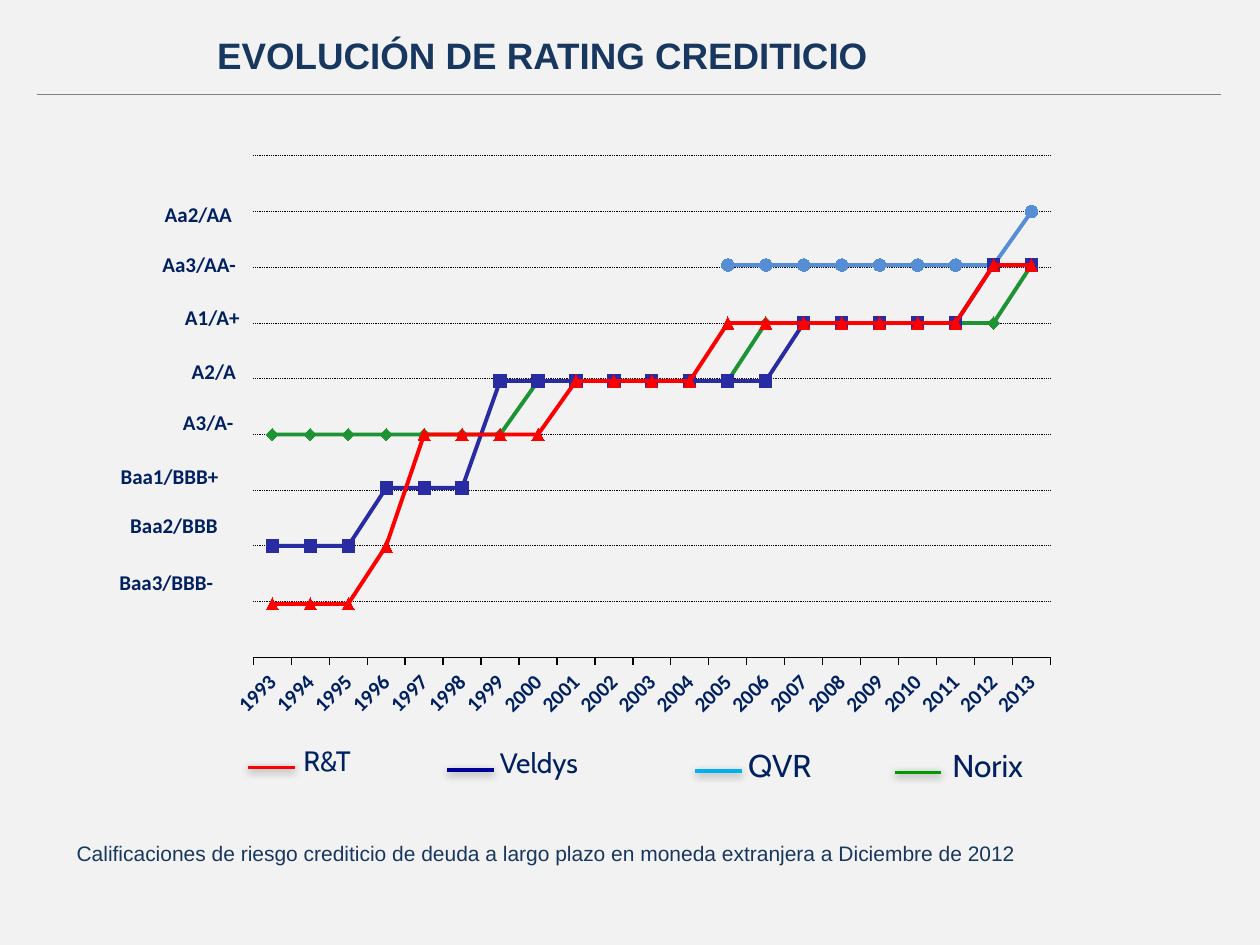
import pptx
import pptx.chart.data
import pptx.dml.color
import pptx.enum.chart
import pptx.enum.dml
import pptx.enum.shapes
import pptx.enum.text
import pptx.oxml
import pptx.oxml.ns
import pptx.util

Inches = pptx.util.Inches
Pt = pptx.util.Pt
RGBColor = pptx.dml.color.RGBColor
Marker = pptx.enum.chart.XL_MARKER_STYLE
Align = pptx.enum.text.PP_ALIGN
qn = pptx.oxml.ns.qn

BACKGROUND = RGBColor(0xF2, 0xF2, 0xF2)
TITLE_BLUE = RGBColor(0x17, 0x37, 0x5E)
NAVY = RGBColor(0x00, 0x20, 0x60)
GRAY = RGBColor(0x80, 0x80, 0x80)
BLACK = RGBColor(0x00, 0x00, 0x00)
RED = RGBColor(0xFF, 0x00, 0x00)
GREEN = RGBColor(0x1D, 0x93, 0x33)
MARKER_GREEN = RGBColor(0x00, 0xB0, 0x50)
SKY = RGBColor(0x55, 0x8E, 0xD5)
INDIGO = RGBColor(0x28, 0x2B, 0xA2)
KEY_GREEN = RGBColor(0x00, 0x99, 0x00)
KEY_BLUE = RGBColor(0x00, 0x00, 0x99)
KEY_SKY = RGBColor(0x00, 0xB0, 0xF0)

TITLE = "EVOLUCIÓN DE RATING CREDITICIO"
FOOTNOTE = ("Calificaciones de riesgo crediticio de deuda a largo plazo "
            "en moneda extranjera a Diciembre de 2012")
YEARS = [str(year) for year in range(1993, 2014)]
RATING_RUNS = [
    ("Norix", GREEN, Marker.DIAMOND, MARKER_GREEN, [(50, 7), (62, 6), (75, 7), (88, 1)]),
    ("QVR", SKY, Marker.CIRCLE, SKY, [(None, 12), (88, 8), (100, 1)]),
    ("Veldys", INDIGO, Marker.SQUARE, INDIGO, [(25, 3), (38, 3), (62, 8), (75, 5), (88, 2)]),
    ("R&T", RED, Marker.TRIANGLE, RED,
     [(12, 3), (25, 1), (50, 4), (62, 4), (75, 7), (88, 2)]),
]
RATING_LABELS = [
    ("Aa2/AA", 0.58, 1.55, 1.36, Align.RIGHT),
    ("Aa3/AA-", 0.94, 1.95, 1.03, Align.RIGHT),
    ("A1/A+", 1.17, 2.37, 0.83, Align.RIGHT),
    ("A2/A", 1.25, 2.8, 0.72, Align.RIGHT),
    ("A3/A-", 1.16, 3.2, 0.79, Align.RIGHT),
    ("Baa1/BBB+", 0.7, 3.63, 1.29, Align.CENTER),
    ("Baa2/BBB", 0.79, 4.02, 1.18, Align.CENTER),
    ("Baa3/BBB-", 0.7, 4.47, 1.24, Align.CENTER),
]
LEGEND = [
    ("R&T", RED, 1.97, 6.09, (2.31, 5.85, 0.87, 0.48), 16),
    ("Veldys", KEY_BLUE, 3.55, 6.11, (3.87, 5.87, 1.3, 0.48), 16),
    ("QVR", KEY_SKY, 5.52, 6.12, (5.84, 5.87, 0.94, 0.53), 18),
    ("Norix", KEY_GREEN, 7.1, 6.13, (7.46, 5.87, 1.38, 0.53), 18),
]
KEY_LENGTH = 0.37
CHART_BOX = (1.72, 1.15, 6.76, 4.65)
PLOT_BOX = (2.01, 1.24, 6.33, 3.98)
RATING_STEP = 12.5


def set_font(font, name, size, color, bold=False):
    font.name = name
    font.size = Pt(size)
    font.bold = bold
    font.color.rgb = color


def add_text(slide, text, box, name, size, color, bold=False, alignment=Align.LEFT):
    text_box = slide.shapes.add_textbox(*map(Inches, box))
    text_box.text_frame.word_wrap = True
    paragraph = text_box.text_frame.paragraphs[0]
    paragraph.text = text
    paragraph.alignment = alignment
    set_font(paragraph.font, name, size, color, bold)
    return paragraph


def add_line(slide, left, top, right, color, width):
    line = slide.shapes.add_connector(
        pptx.enum.shapes.MSO_CONNECTOR.STRAIGHT,
        Inches(left), Inches(top), Inches(right), Inches(top))
    line.line.color.rgb = color
    line.line.width = Pt(width)
    effects = pptx.oxml.parse_xml(f'<a:effectLst {pptx.oxml.ns.nsdecls("a")}/>')
    line._element.spPr.append(effects)
    return effects


def add_shadow(effects):
    effects.append(pptx.oxml.parse_xml(
        f'<a:outerShdw {pptx.oxml.ns.nsdecls("a")} blurRad="{Pt(5)}" dist="{Pt(1.6)}" '
        'dir="5400000" rotWithShape="0"><a:srgbClr val="000000">'
        '<a:alpha val="38000"/></a:srgbClr></a:outerShdw>'))


def place_plot(chart):
    left, top, width, height = CHART_BOX
    plot_left, plot_top, plot_width, plot_height = PLOT_BOX
    fractions = {"x": (plot_left - left) / width, "y": (plot_top - top) / height,
                 "w": plot_width / width, "h": plot_height / height}
    values = "".join(f'<c:{key} val="{value:.3f}"/>' for key, value in fractions.items())
    layout = pptx.oxml.parse_xml(
        f'<c:layout {pptx.oxml.ns.nsdecls("c")}><c:manualLayout>'
        '<c:layoutTarget val="inner"/><c:xMode val="edge"/><c:yMode val="edge"/>'
        f'{values}</c:manualLayout></c:layout>')
    plot_area = chart._chartSpace.chart.plotArea
    for old_layout in plot_area.findall(qn("c:layout")):
        plot_area.remove(old_layout)
    plot_area.insert(0, layout)


def add_rating_chart(slide):
    data = pptx.chart.data.CategoryChartData()
    data.categories = YEARS
    for name, _, _, _, runs in RATING_RUNS:
        data.add_series(name, [value for value, count in runs for _ in range(count)])
    chart = slide.shapes.add_chart(
        pptx.enum.chart.XL_CHART_TYPE.LINE_MARKERS, *map(Inches, CHART_BOX), data).chart
    chart.has_legend = False
    chart.has_title = False
    set_font(chart.font, "Calibri", 10, BLACK)
    place_plot(chart)

    plot = chart.plots[0]
    plot.vary_by_categories = False
    for series, (_, color, style, marker_color, _) in zip(plot.series, RATING_RUNS):
        series.smooth = False
        series.format.line.color.rgb = color
        series.format.line.width = Pt(2.25)
        series.marker.style = style
        series.marker.size = 7
        series.marker.format.fill.solid()
        series.marker.format.fill.fore_color.rgb = marker_color
        series.marker.format.line.color.rgb = color

    year_axis = chart.category_axis
    year_axis.major_tick_mark = pptx.enum.chart.XL_TICK_MARK.OUTSIDE
    year_axis.format.line.color.rgb = BLACK
    year_axis.format.line.width = Pt(0.75)
    set_font(year_axis.tick_labels.font, "Calibri", 12, NAVY, True)
    year_axis._element.find(qn("c:txPr")).find(qn("a:bodyPr")).set("rot", "-2700000")

    rating_axis = chart.value_axis
    rating_axis.visible = False
    rating_axis.minimum_scale = 0
    rating_axis.maximum_scale = 9 * RATING_STEP
    rating_axis.major_unit = RATING_STEP
    rating_axis.has_major_gridlines = True
    grid_line = rating_axis.major_gridlines.format.line
    grid_line.color.rgb = BLACK
    grid_line.width = Pt(0.5)
    grid_line.dash_style = pptx.enum.dml.MSO_LINE.ROUND_DOT


def main():
    presentation = pptx.Presentation()
    presentation.slide_width = Inches(10)
    presentation.slide_height = Inches(7.5)
    slide = presentation.slides.add_slide(presentation.slide_layouts[5])
    slide.background.fill.solid()
    slide.background.fill.fore_color.rgb = BACKGROUND

    title = slide.shapes.title
    title.left, title.top, title.width, title.height = map(Inches, (0.33, 0.21, 7.95, 0.45))
    title.text_frame.text = TITLE
    title.text_frame.vertical_anchor = pptx.enum.text.MSO_ANCHOR.TOP
    title_paragraph = title.text_frame.paragraphs[0]
    title_paragraph.alignment = Align.CENTER
    set_font(title_paragraph.font, "Arial", 21, TITLE_BLUE, True)
    add_line(slide, 0.29, 0.75, 9.69, GRAY, 0.75)

    add_rating_chart(slide)
    for label, left, top, width, alignment in RATING_LABELS:
        add_text(slide, label, (left, top, width, 0.4), "Calibri", 12, NAVY, True, alignment)
    for agency, color, left, top, box, size in LEGEND:
        add_shadow(add_line(slide, left, top, left + KEY_LENGTH, color, 2))
        add_text(slide, agency, box, "Cabin", size, NAVY)

    footnote = add_text(slide, FOOTNOTE, (0.51, 6.66, 8.67, 0.26), "Arial", 12, TITLE_BLUE)
    footnote.line_spacing = 0.8
    presentation.save("out.pptx")


if __name__ == "__main__":
    main()
